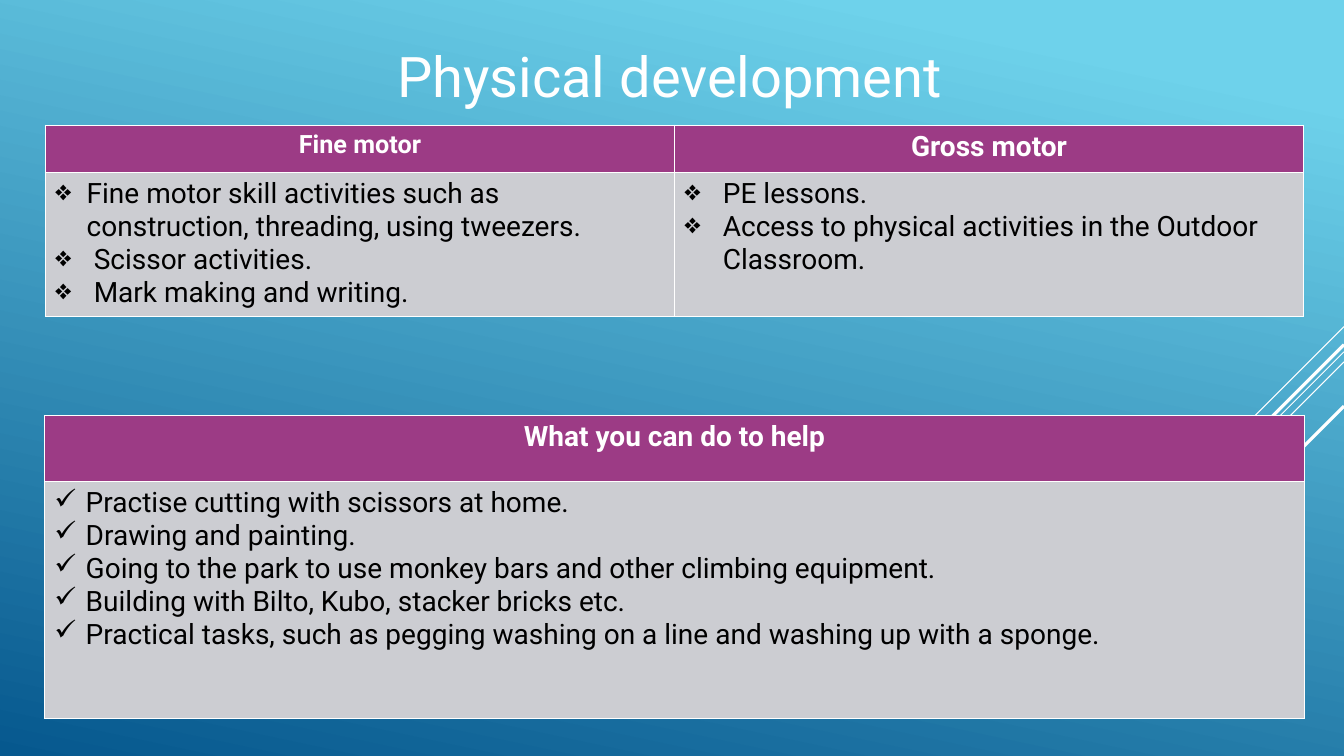
from lxml.etree import SubElement
from pptx import Presentation
from pptx.dml.color import RGBColor
from pptx.enum.shapes import MSO_CONNECTOR
from pptx.enum.text import MSO_ANCHOR, PP_ALIGN
from pptx.oxml import parse_xml
from pptx.oxml.ns import nsdecls, qn
from pptx.util import Inches, Pt

FONT = "Roboto"
WHITE, BLACK, PLUM, GREY = "FFFFFF", "000000", "9C3B85", "CCCDD2"
SKY = [(0.1, "6ED2EB"), (1, "06588E")]
TITLE = "Physical development"

# Diagonal lines from the right edge: start y, run to the lower left, width
RAYS = [(3.24, 1, 0.75), (3.49, 3.26, 0.75), (3.59, 2.07, 0.75),
        (3.42, 1.91, 2.25), (4.03, 1.39, 2.25)]

# Columns: heading, heading size, bullet, [(text, indent)]
HELP = [
    ("What you can do to help", 20, "✓", [
        ("Practise cutting with scissors at home.", 0.31),
        ("Drawing and painting.", 0.31),
        ("Going to the park to use monkey bars and other climbing equipment.", 0.31),
        ("Building with Bilto, Kubo, stacker bricks etc.", 0.31),
        ("Practical tasks, such as pegging washing on a line and washing up "
         "with a sponge.", 0.31),
    ]),
]
MOTOR = [
    ("Fine motor", 18, "❖", [
        ("Fine motor skill activities such as construction, threading, "
         "using tweezers.", 0.31),
        ("Scissor activities.", 0.38),
        ("Mark making and writing.", 0.38),
    ]),
    ("Gross motor", 20, "❖", [
        ("PE lessons.", 0.38),
        ("Access to physical activities in the Outdoor Classroom.", 0.38),
    ]),
]
# Left, top, width, row heights, columns
TABLES = [(0.44, 4.12, 12.5, (0.66, 2.35), HELP),
          (0.45, 1.24, 12.48, (0.47, 1.41), MOTOR)]


def color(code):
    return RGBColor.from_string(code)


def write(para, text, size, code, bold=False):
    para.text = text
    font = para.runs[0].font
    font.name, font.size, font.bold = FONT, Pt(size), bold
    font.color.rgb = color(code)


def bullet(para, mark, indent):
    props = para._p.get_or_add_pPr()
    props.set("marL", str(Inches(indent)))
    props.set("indent", str(-Inches(indent)))
    SubElement(props, qn("a:buChar"), char=mark)


def paint(cell, code):
    """Fill a cell and give it thin white borders."""
    cell.fill.solid()
    cell.fill.fore_color.rgb = color(code)
    props = cell._tc.get_or_add_tcPr()
    for spot, side in enumerate("LRTB"):
        props.insert(spot, parse_xml(
            f'<a:ln{side} {nsdecls("a")} w="{Pt(0.75)}"><a:solidFill>'
            f'<a:srgbClr val="{WHITE}"/></a:solidFill></a:ln{side}>'))


def add_grid(slide, left, top, width, rows, cols):
    frame = slide.shapes.add_table(len(rows), len(cols), Inches(left), Inches(top),
                                   Inches(width), Inches(sum(rows)))
    table = frame.table
    for row, height in zip(table.rows, rows):
        row.height = Inches(height)
    for num, (head, size, mark, items) in enumerate(cols):
        table.columns[num].width = Inches(width / len(cols))
        top_cell, body = table.cell(0, num), table.cell(1, num)
        paint(top_cell, PLUM)
        paint(body, GREY)
        para = top_cell.text_frame.paragraphs[0]
        write(para, head, size, WHITE, True)
        para.alignment = PP_ALIGN.CENTER
        body.text_frame.text = "\n".join(text for text, _ in items)
        for para, (text, indent) in zip(body.text_frame.paragraphs, items):
            write(para, text, 20, BLACK)
            bullet(para, mark, indent)


def add_ray(slide, top, run, width):
    edge = 13.33
    ray = slide.shapes.add_connector(
        MSO_CONNECTOR.STRAIGHT, Inches(edge), Inches(top),
        Inches(edge - run), Inches(top + run))
    ray.line.color.rgb = color(WHITE)
    ray.line.width = Pt(width)
    SubElement(ray._element.spPr, qn("a:effectLst"))


def add_title(slide):
    box = slide.shapes.add_textbox(Inches(1.14), Inches(0.3), Inches(11), Inches(0.9))
    frame = box.text_frame
    frame.word_wrap = True
    frame.vertical_anchor = MSO_ANCHOR.MIDDLE
    para = frame.paragraphs[0]
    write(para, TITLE, 40, WHITE)
    para.alignment = PP_ALIGN.CENTER


def main():
    deck = Presentation()
    deck.slide_width, deck.slide_height = Inches(13.33), Inches(7.5)
    slide = deck.slides.add_slide(deck.slide_layouts[6])
    fill = slide.background.fill
    fill.gradient()
    fill.gradient_angle = 360 - 102
    for stop, (place, code) in zip(fill.gradient_stops, SKY):
        stop.position = place
        stop.color.rgb = color(code)
    for ray in RAYS:
        add_ray(slide, *ray)
    add_title(slide)
    for grid in TABLES:
        add_grid(slide, *grid)
    deck.save("out.pptx")


if __name__ == "__main__":
    main()
